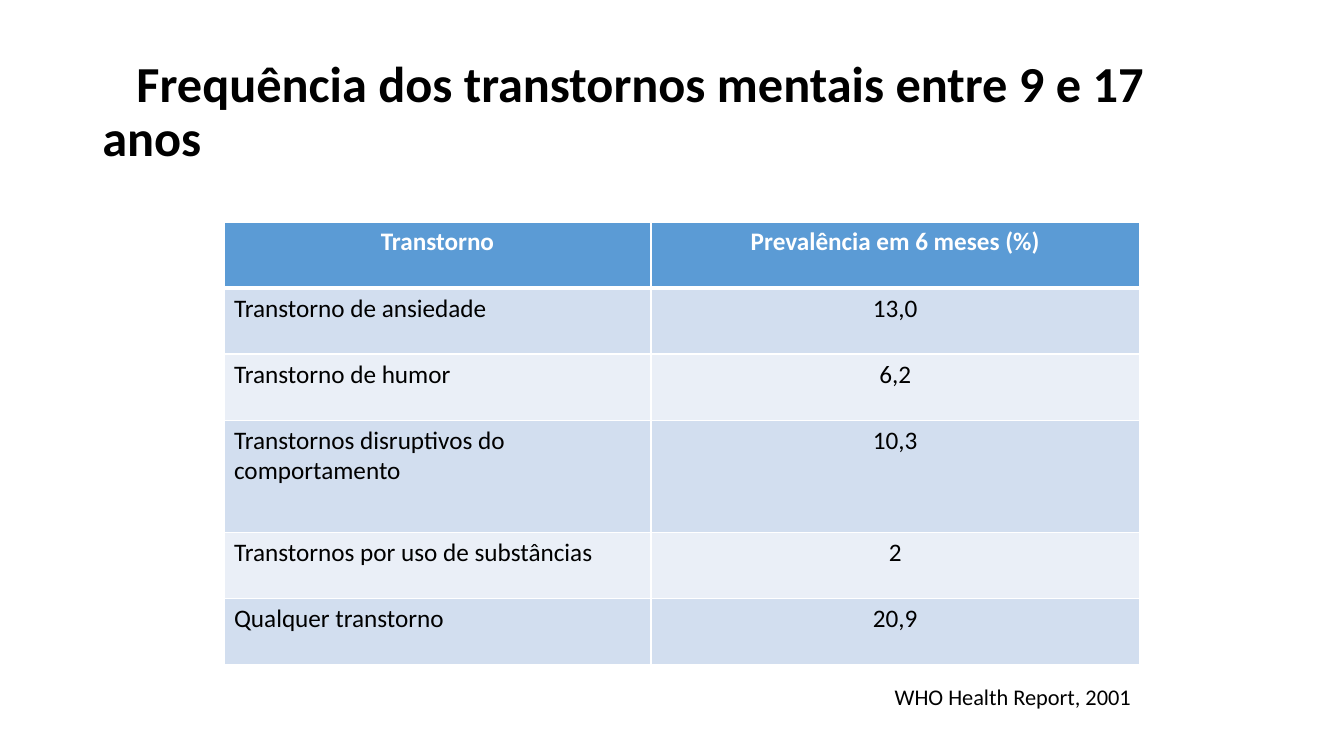
from lxml import etree
from pptx import Presentation
from pptx.dml.color import RGBColor
from pptx.enum import text
from pptx.oxml import ns
from pptx.util import Pt

# Content
TITLE = "Frequência dos transtornos mentais entre 9 e 17 anos"
ROWS = [
    ("Transtorno", "Prevalência em 6 meses (%)"),
    ("Transtorno de ansiedade", "13,0"),
    ("Transtorno de humor", "6,2"),
    ("Transtornos disruptivos do comportamento", "10,3"),
    ("Transtornos por uso de substâncias", "2"),
    ("Qualquer transtorno", "20,9"),
]
CITATION = "WHO Health Report, 2001"

# Style
FONT = "Calibri"
BLACK = RGBColor(0, 0, 0)
WHITE = RGBColor(255, 255, 255)
HEADER_BLUE = RGBColor(0x5B, 0x9B, 0xD5)
BANDS = [RGBColor(0xD2, 0xDE, 0xEF), RGBColor(0xEA, 0xEF, 0xF7)]

# Layout, in points
TABLE_LEFT, TABLE_TOP = 160, 158.5
COLUMN_WIDTHS = (305, 349)
ROW_HEIGHT, TALL_ROW_HEIGHT, TALL_ROW = 47.2, 80, 3
TITLE_INDENT = 24.4


def style(paragraph, size, color, bold=False):
    for run in paragraph.runs:
        run.font.name = FONT
        run.font.size = Pt(size)
        run.font.bold = bold
        run.font.color.rgb = color


def add_border(cell, side, width):
    properties = cell._tc.get_or_add_tcPr()
    line = etree.SubElement(properties, ns.qn(f"a:ln{side}"), w=str(Pt(width)))
    fill = etree.SubElement(line, ns.qn("a:solidFill"))
    etree.SubElement(fill, ns.qn("a:srgbClr"), val=str(WHITE))


def add_text(slide, box, content, wrap):
    frame = slide.shapes.add_textbox(*map(Pt, box)).text_frame
    frame.word_wrap = wrap
    frame.text = content
    return frame


def main():
    deck = Presentation()
    deck.slide_width, deck.slide_height = Pt(960), Pt(540)
    slide = deck.slides.add_slide(deck.slide_layouts[6])

    # Title with an indented first line
    title = add_text(slide, (66, 28.8, 828, 104.4), TITLE, True)
    title.vertical_anchor = text.MSO_ANCHOR.MIDDLE
    heading = title.paragraphs[0]
    heading.line_spacing = 0.9
    heading._p.get_or_add_pPr().set("indent", str(Pt(TITLE_INDENT)))
    style(heading, 36, BLACK, bold=True)

    # Prevalence table
    heights = [TALL_ROW_HEIGHT if r == TALL_ROW else ROW_HEIGHT
               for r in range(len(ROWS))]
    prevalence = slide.shapes.add_table(
        len(ROWS), len(COLUMN_WIDTHS), Pt(TABLE_LEFT), Pt(TABLE_TOP),
        Pt(sum(COLUMN_WIDTHS)), Pt(sum(heights))).table
    for column, width in zip(prevalence.columns, COLUMN_WIDTHS):
        column.width = Pt(width)
    for r, (height, row) in enumerate(zip(heights, ROWS)):
        prevalence.rows[r].height = Pt(height)
        header = r == 0
        for c, content in enumerate(row):
            cell = prevalence.cell(r, c)
            cell.text = content
            entry = cell.text_frame.paragraphs[0]
            centred = header or c == 1
            entry.alignment = (text.PP_ALIGN.CENTER if centred
                               else text.PP_ALIGN.LEFT)
            style(entry, 18, WHITE if header else BLACK, bold=header)
            for side in "LRTB":
                below_header = (r, side) in ((0, "B"), (1, "T"))
                add_border(cell, side, 3 if below_header else 1)
            cell.fill.solid()
            cell.fill.fore_color.rgb = (HEADER_BLUE if header
                                        else BANDS[(r - 1) % 2])

    # Citation
    citation = add_text(slide, (632, 484.5, 186, 26.6), CITATION, False)
    citation.auto_size = text.MSO_AUTO_SIZE.SHAPE_TO_FIT_TEXT
    style(citation.paragraphs[0], 16, BLACK)

    deck.save("out.pptx")


if __name__ == "__main__":
    main()
